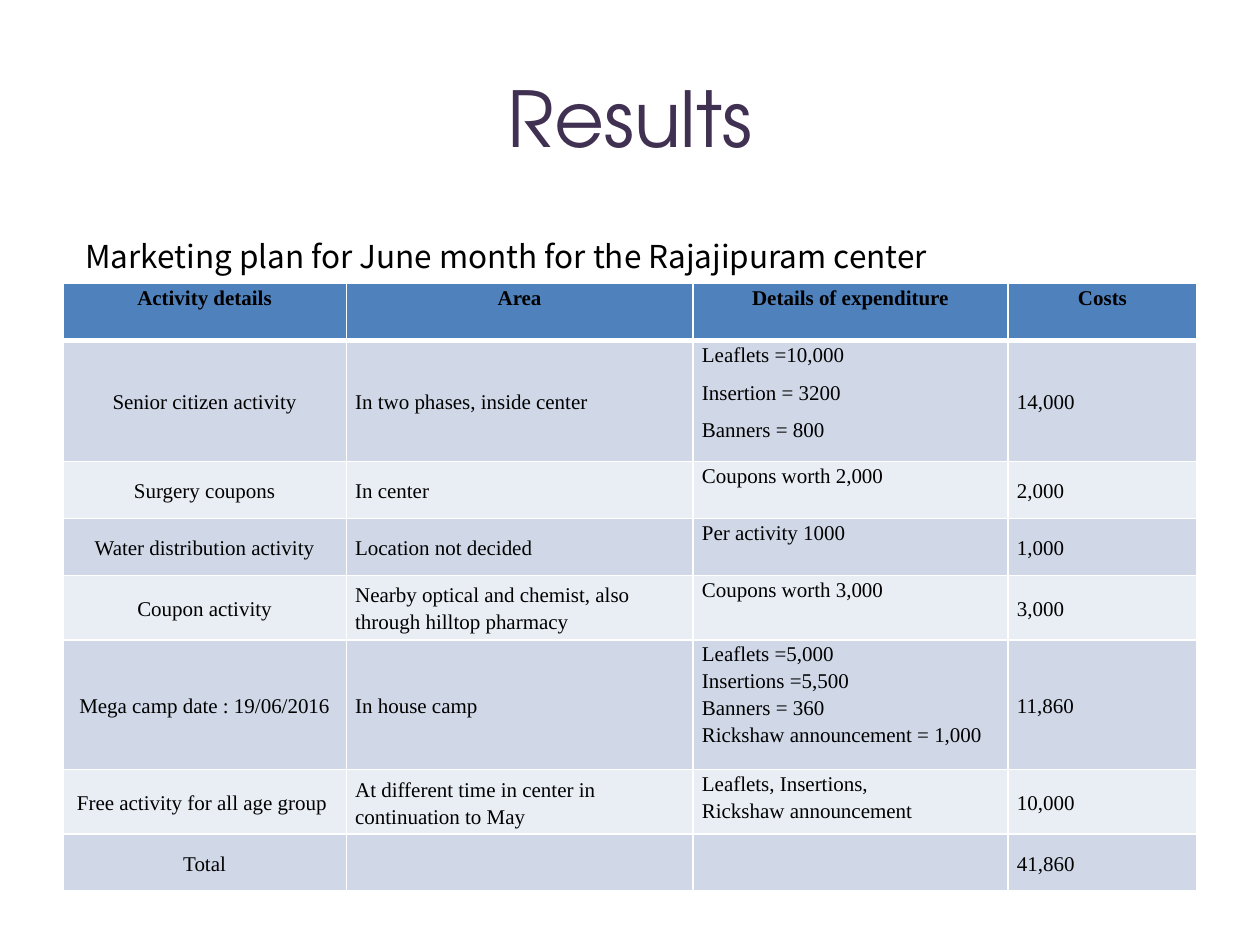
from dataclasses import dataclass

from lxml.etree import SubElement
from pptx import Presentation
from pptx.dml.color import RGBColor
from pptx.enum.text import MSO_ANCHOR, PP_ALIGN
from pptx.oxml.ns import qn
from pptx.util import Cm, Pt


# Colours, fonts and type sizes
@dataclass(frozen=True)
class Theme:
    plum: str = "403152"
    black: str = "000000"
    white: str = "FFFFFF"
    blue: str = "4F81BD"
    bands: tuple = ("D0D8E8", "E9EDF4")
    head: str = "TeX Gyre Adventor"
    body: str = "Noto Sans CJK KR"
    grid: str = "Times New Roman"
    big: int = 44
    mid: int = 18
    small: int = 12


def apply(item, form):
    for name, value in form.items():
        setattr(item, name, value)


class Deck:
    def __init__(self, theme):
        self.theme = theme
        self.prs = Presentation()
        apply(self.prs, {"slide_width": Cm(25.4), "slide_height": Cm(19.05)})
        self.slide = self.prs.slides.add_slide(self.prs.slide_layouts[6])

    def words(self, frame, text, font, color, para):
        """Fill a text frame, one paragraph for each line of text."""
        for i, line in enumerate(text.split("\n")):
            par = frame.add_paragraph() if i else frame.paragraphs[0]
            apply(par, para)
            run = par.add_run()
            run.text = line
            apply(run.font, font)
            run.font.color.rgb = RGBColor.from_string(color)

    def label(self, box, text, font, color, anchor, align):
        shape = self.slide.shapes.add_textbox(*map(Cm, box))
        frame = shape.text_frame
        apply(frame, {"word_wrap": True, "vertical_anchor": anchor})
        self.words(frame, text, font, color, {"alignment": align})

    def edge(self, cell, widths):
        """Draw the left, right, top and bottom borders of a cell."""
        props = cell._tc.get_or_add_tcPr()
        for i, (side, width) in enumerate(zip("LRTB", widths)):
            line = props.makeelement(qn(f"a:ln{side}"), {"w": str(Pt(width))})
            fill = SubElement(line, qn("a:solidFill"))
            SubElement(fill, qn("a:srgbClr"), val=self.theme.white)
            props.insert(i, line)

    def cell(self, cell, text, row, col, after):
        theme, top = self.theme, row == 0
        upper = top or col == 2
        apply(cell, {
            "margin_left": Cm(0.18), "margin_right": Cm(0.18),
            "margin_top": 0, "margin_bottom": 0,
            "vertical_anchor": MSO_ANCHOR.TOP if upper else MSO_ANCHOR.MIDDLE,
        })
        cell.fill.solid()
        shade = theme.blue if top else theme.bands[(row - 1) % 2]
        cell.fill.fore_color.rgb = RGBColor.from_string(shade)
        self.edge(cell, (1, 1, 3 if row == 1 else 1, 3 if top else 1))
        if text:
            mid = top or col == 0
            font = {"name": theme.grid, "size": Pt(theme.small), "bold": top}
            para = {"alignment": PP_ALIGN.CENTER if mid else PP_ALIGN.LEFT,
                    "line_spacing": 1.15, "space_after": Pt(after)}
            self.words(cell.text_frame, text, font, theme.black, para)

    def table(self, left, top, cols, rows, data, gaps):
        size = map(Cm, (left, top, sum(cols), sum(rows)))
        table = self.slide.shapes.add_table(len(rows), len(cols), *size).table
        for col, width in zip(table.columns, cols):
            col.width = Cm(width)
        for row, height in zip(table.rows, rows):
            row.height = Cm(height)
        for r, line in enumerate(data):
            for c, text in enumerate(line):
                self.cell(table.cell(r, c), text, r, c, gaps.get((r, c), 0))


PLAN = [
    ("Activity details", "Area", "Details of expenditure", "Costs"),
    ("Senior citizen activity", "In two phases, inside center",
     "Leaflets =10,000\nInsertion = 3200\nBanners = 800", "14,000"),
    ("Surgery coupons", "In center", "Coupons worth 2,000", "2,000"),
    ("Water distribution activity", "Location not decided",
     "Per activity 1000", "1,000"),
    ("Coupon activity",
     "Nearby optical and chemist, also through hilltop pharmacy",
     "Coupons worth 3,000", "3,000"),
    ("Mega camp date : 19/06/2016", "In house camp",
     "Leaflets =5,000\nInsertions =5,500\nBanners = 360\n"
     "Rickshaw announcement = 1,000", "11,860"),
    ("Free activity for all age group ",
     "At different time in center in continuation to May",
     "Leaflets, Insertions,\nRickshaw announcement", "10,000"),
    ("Total", "", "", "41,860"),
]


def main():
    theme = Theme()
    deck = Deck(theme)

    # Title
    deck.label((1.27, 0.76, 22.86, 3.18), "Results",
               {"name": theme.head, "size": Pt(theme.big)}, theme.plum,
               MSO_ANCHOR.MIDDLE, PP_ALIGN.CENTER)

    # Marketing plan table
    low, pair = 1.15, 1.3
    deck.table(1.27, 5.72, (5.71, 6.99, 6.35, 3.81),
               (low, 2.43, low, low, pair, 2.62, pair, low),
               PLAN, {(1, 2): 6})

    # Table heading
    deck.label((1.47, 4.65, 22.23, 1.02),
               "Marketing plan for June month for the Rajajipuram center",
               {"name": theme.body, "size": Pt(theme.mid)}, theme.black,
               MSO_ANCHOR.TOP, PP_ALIGN.LEFT)

    deck.prs.save("out.pptx")


if __name__ == "__main__":
    main()
